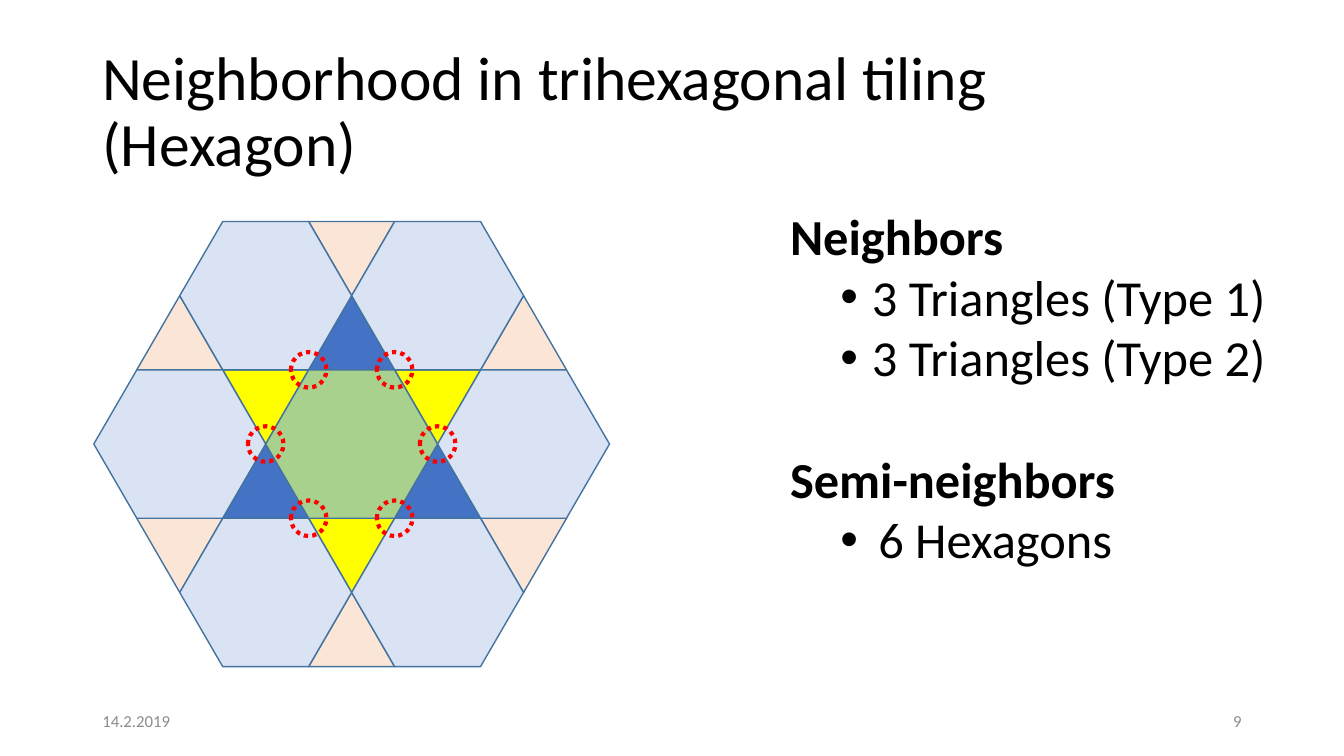
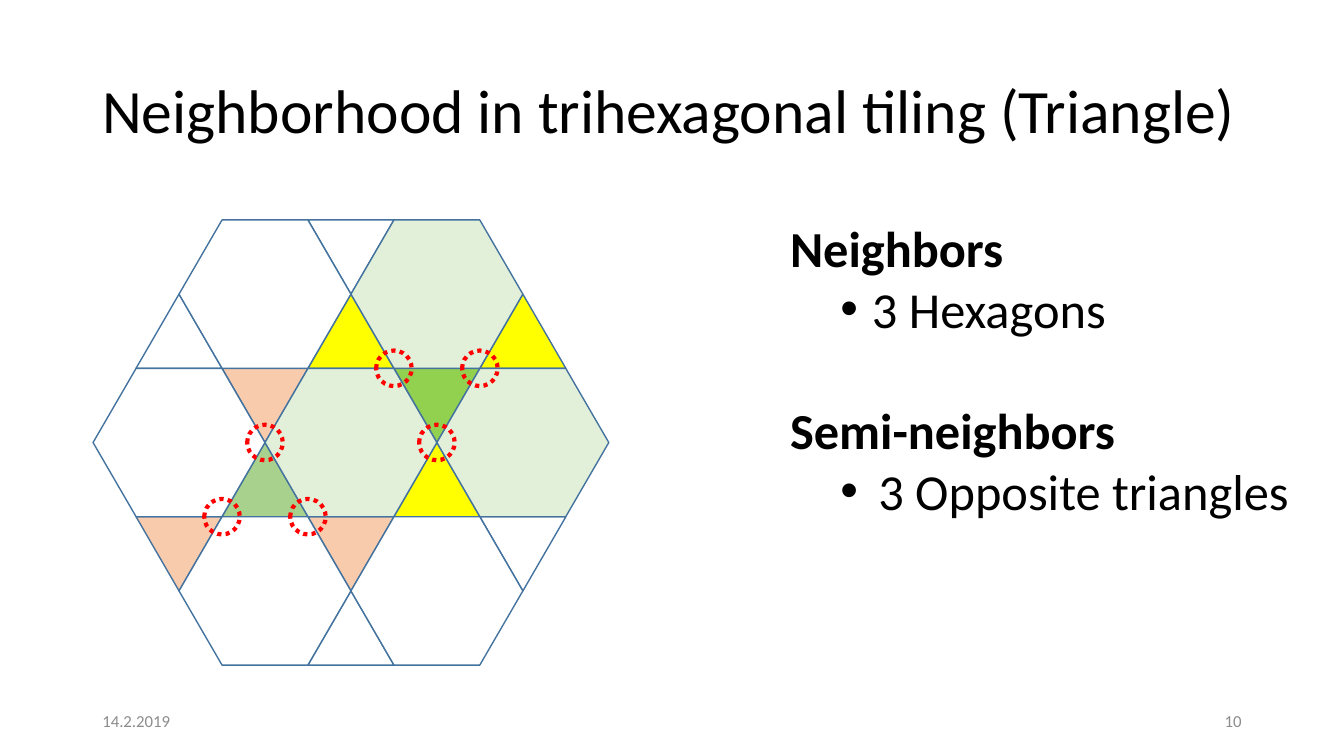
from lxml.etree import SubElement
from pptx import Presentation
from pptx.dml.color import RGBColor
from pptx.enum.dml import MSO_LINE
from pptx.enum.shapes import MSO_SHAPE
from pptx.enum.text import MSO_ANCHOR, PP_ALIGN
from pptx.oxml.ns import qn
from pptx.util import Pt

BLACK = RGBColor(0x00, 0x00, 0x00)
GREY = RGBColor(0x8C, 0x8C, 0x8C)
WHITE = RGBColor(0xFF, 0xFF, 0xFF)
EDGE = RGBColor(0x43, 0x73, 0x9E)
RED = RGBColor(0xFF, 0x00, 0x00)
YELLOW = RGBColor(0xFF, 0xFF, 0x00)
BLUE = RGBColor(0x44, 0x72, 0xC4)
PALE_BLUE = RGBColor(0xDA, 0xE3, 0xF3)
GREEN = RGBColor(0xA9, 0xD1, 0x8E)
LIME = RGBColor(0x92, 0xD0, 0x50)
PALE_GREEN = RGBColor(0xE2, 0xF0, 0xD9)
PEACH = RGBColor(0xF8, 0xCB, 0xAD)
PALE_PEACH = RGBColor(0xFB, 0xE5, 0xD6)

FONT = "Calibri"
DATE = "14.2.2019"
COL, ROW = 30.7, 53
RING = 25.4

HEXAGONS = [(2, 0), (6, 0), (0, 2), (4, 2), (8, 2), (2, 4), (6, 4)]
UP = [(1, 1), (5, 1), (9, 1), (3, 3), (7, 3), (5, 5)]
DOWN = [(5, 0), (3, 2), (7, 2), (1, 4), (5, 4), (9, 4)]

SLIDES = [
    {
        "title": "Neighborhood in trihexagonal tiling (Hexagon)",
        "number": "9",
        "origin": (67, 158.2),
        "hexagon": PALE_BLUE,
        "triangle": PALE_PEACH,
        "marked": [
            (GREEN, [(4, 2)]),
            (YELLOW, [(3, 2), (7, 2), (5, 4)]),
            (BLUE, [(5, 1), (3, 3), (7, 3)]),
        ],
        "rings": [(5, 2), (7, 2), (4, 3), (8, 3), (5, 4), (7, 4)],
        "text_top": 143.3,
        "lists": [
            ("Neighbors", ["3 Triangles (Type 1)", "3 Triangles (Type 2)"]),
            ("Semi-neighbors", ["6 Hexagons"]),
        ],
    },
    {
        "title": "Neighborhood in trihexagonal tiling (Triangle)",
        "number": "10",
        "origin": (66.5, 157.1),
        "hexagon": WHITE,
        "triangle": WHITE,
        "marked": [
            (PALE_GREEN, [(6, 0), (4, 2), (8, 2)]),
            (LIME, [(7, 2)]),
            (YELLOW, [(5, 1), (9, 1), (7, 3)]),
            (GREEN, [(3, 3)]),
            (PEACH, [(3, 2), (1, 4), (5, 4)]),
        ],
        "rings": [(7, 2), (9, 2), (8, 3), (4, 3), (3, 4), (5, 4)],
        "text_top": 151.9,
        "lists": [
            ("Neighbors", ["3 Hexagons"]),
            ("Semi-neighbors", ["3 Opposite triangles"]),
        ],
    },
]


def add_box(s, x, y, w, h, anchor=MSO_ANCHOR.TOP):
    tf = s.shapes.add_textbox(Pt(x), Pt(y), Pt(w), Pt(h)).text_frame
    tf.word_wrap = True
    tf.vertical_anchor = anchor
    return tf


def write(p, text, size, color=BLACK, bold=False):
    p.text = text
    font = p.runs[0].font
    font.name, font.size, font.bold = FONT, Pt(size), bold
    font.color.rgb = color


def add_frame(s, title, number):
    p = add_box(s, 66, 28.75, 828, 104.4, MSO_ANCHOR.MIDDLE).paragraphs[0]
    write(p, title, 44)
    p.line_spacing = 0.9
    for x, text, align in [(66, DATE, PP_ALIGN.LEFT), (678, number, PP_ALIGN.RIGHT)]:
        p = add_box(s, x, 500.5, 216, 28.75, MSO_ANCHOR.MIDDLE).paragraphs[0]
        write(p, text, 12, GREY)
        p.alignment = align


def add_outline(shapes, kind, x, y, w, h, line, width):
    sp = shapes.add_shape(kind, Pt(x), Pt(y), Pt(w), Pt(h))
    sp.shadow.inherit = False
    sp.line.color.rgb = line
    sp.line.width = Pt(width)
    return sp


def add_tiling(s, data):
    x0, y0 = data["origin"]
    fills = {cell: color for color, cells in data["marked"] for cell in cells}
    tiles = s.shapes.add_group_shape().shapes
    for kind, cells, cols, rows, angle, base in [
        (MSO_SHAPE.ISOSCELES_TRIANGLE, UP, 2, 1, 0, data["triangle"]),
        (MSO_SHAPE.ISOSCELES_TRIANGLE, DOWN, 2, 1, 180, data["triangle"]),
        (MSO_SHAPE.HEXAGON, HEXAGONS, 4, 2, 0, data["hexagon"]),
    ]:
        for col, row in cells:
            sp = add_outline(tiles, kind, x0 + col * COL, y0 + row * ROW,
                             cols * COL, rows * ROW, EDGE, 1)
            sp.rotation = angle
            sp.fill.solid()
            sp.fill.fore_color.rgb = fills.get((col, row), base)
            if kind == MSO_SHAPE.HEXAGON:
                sp.adjustments[0] = 0.29
    rings = s.shapes.add_group_shape().shapes
    for col, row in data["rings"]:
        sp = add_outline(rings, MSO_SHAPE.OVAL, x0 + col * COL - RING / 2,
                         y0 + row * ROW - RING / 2, RING, RING, RED, 3)
        sp.fill.background()
        sp.line.dash_style = MSO_LINE.ROUND_DOT


def add_bullet(p, left, hanging):
    pPr = p._p.get_or_add_pPr()
    pPr.set("marL", str(Pt(left)))
    pPr.set("indent", str(-Pt(hanging)))
    SubElement(pPr, qn("a:buFont"), typeface="Arial")
    SubElement(pPr, qn("a:buChar"), char="•")


def add_lists(s, top, lists):
    tf = add_box(s, 557.3, top, 379.5, 269.3)
    for i, (heading, items) in enumerate(lists):
        p = tf.add_paragraph() if i else tf.paragraphs[0]
        write(p, heading, 36, bold=True)
        if i:
            p.space_before = Pt(43.6)
        for item in items:
            p = tf.add_paragraph()
            write(p, item, 36)
            p.level = 1
            add_bullet(p, 58.5 + 4.5 * i, 22.5 + 4.5 * i)


def main():
    prs = Presentation()
    prs.slide_width, prs.slide_height = Pt(960), Pt(540)
    for data in SLIDES:
        s = prs.slides.add_slide(prs.slide_layouts[6])
        add_frame(s, data["title"], data["number"])
        add_tiling(s, data)
        add_lists(s, data["text_top"], data["lists"])
    prs.save("out.pptx")


if __name__ == "__main__":
    main()
